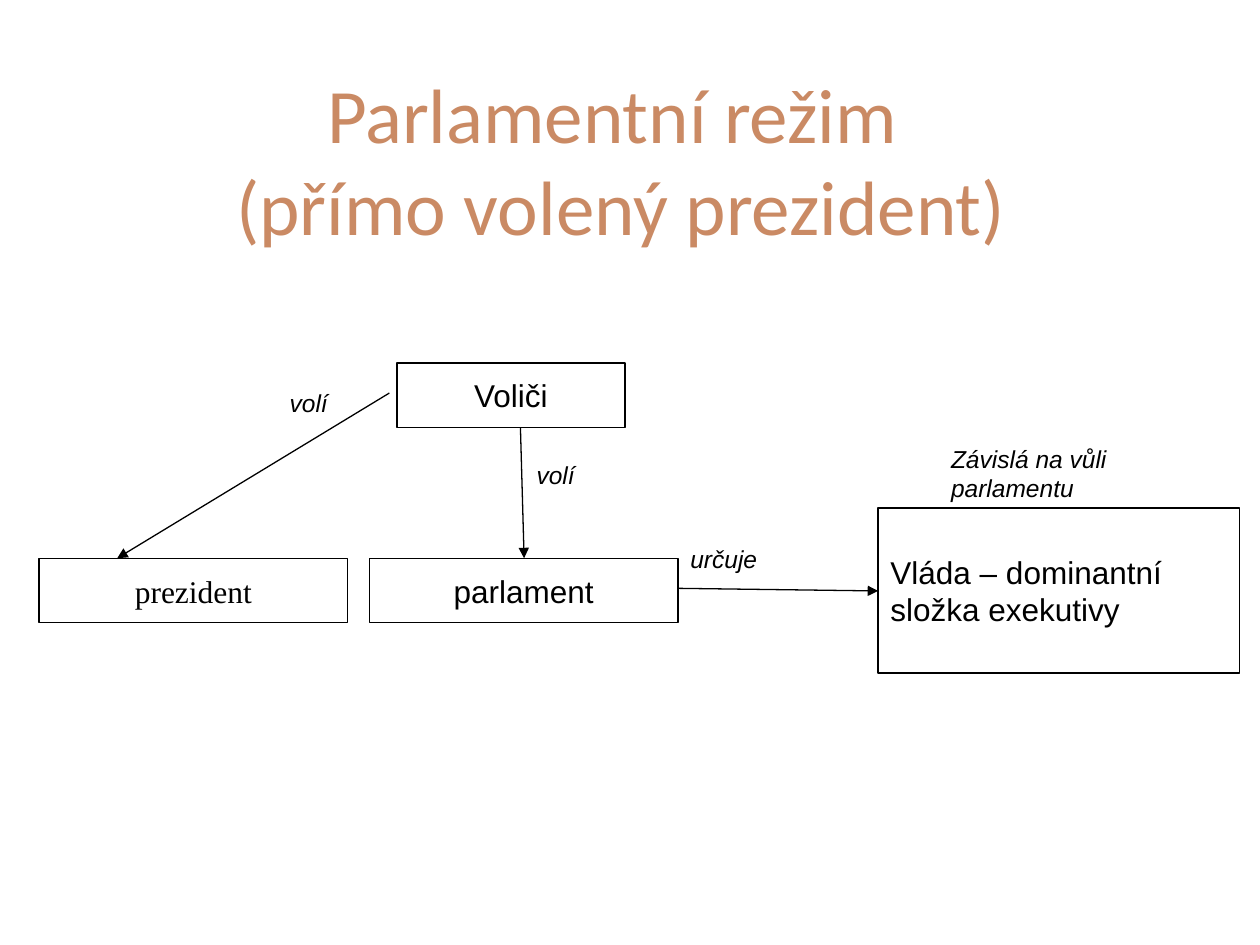
from dataclasses import dataclass

from lxml.etree import SubElement
from pptx import Presentation
from pptx.dml.color import RGBColor as Color
from pptx.enum.shapes import MSO_CONNECTOR as Link, MSO_SHAPE as Form
from pptx.enum.text import MSO_ANCHOR as Anchor, MSO_AUTO_SIZE as Fit, PP_ALIGN as Align
from pptx.oxml.ns import qn
from pptx.util import Pt


@dataclass(frozen=True)
class Theme:
    ink: Color = Color(0, 0, 0)
    accent: Color = Color(0xCA, 0x8A, 0x64)
    head: str = "Calibri"
    body: str = "Arial"
    serif: str = "Times New Roman"
    large: float = 44
    mid: float = 18
    small: float = 14
    line: float = 0.75


@dataclass(frozen=True)
class Area:
    x: float
    y: float
    w: float
    h: float

    def points(self) -> tuple:
        return Pt(self.x), Pt(self.y), Pt(self.w), Pt(self.h)


@dataclass(frozen=True)
class Box:
    text: str
    area: Area
    font: str
    align: Align = Align.CENTER


@dataclass(frozen=True)
class Label:
    text: str
    area: Area


@dataclass(frozen=True)
class Arrow:
    start: tuple[float, float]
    end: tuple[float, float]


THEME = Theme()
LEFT, ROW, WIDE, HIGH = 22.3, 319, 176.4, 36.7
NOTE = 23.8

BOXES = [
    Box("Voliči", Area(226.8, 207.4, 130.3, HIGH), THEME.body),
    Box("parlament", Area(211, ROW, WIDE, HIGH), THEME.body),
    Box("Vláda – dominantní složka exekutivy", Area(501.8, 290.2, 206.6, 94.3),
        THEME.body, Align.LEFT),
    Box("prezident", Area(LEFT, ROW, WIDE, HIGH), THEME.serif),
]
LABELS = [
    Label("volí", Area(158.4, 218.2, 79.9, NOTE)),
    Label("volí", Area(299.5, 259.2, 79.9, NOTE)),
    Label("určuje", Area(387.4, 307.4, 84.2, NOTE)),
    Label("Závislá na vůli parlamentu", Area(536.4, 249.8, 151.2, 40.9)),
]
ARROWS = [
    Arrow((297.4, 244.1), (299.5, ROW)),
    Arrow((222.5, 224.6), (67, ROW)),
    Arrow((387.4, 336.2), (501.8, 337.7)),
]


def write(shape, text: str, font: str, size: float, color: Color,
          align: Align, anchor: Anchor, italic: bool = False) -> None:
    frame = shape.text_frame
    frame.text = text
    frame.word_wrap = True
    frame.auto_size = Fit.NONE
    frame.vertical_anchor = anchor
    for para in frame.paragraphs:
        para.alignment = align
        face = para.font
        face.name, face.size, face.italic = font, Pt(size), italic
        face.color.rgb = color


def add_title(slide, text: str, area: Area) -> None:
    title = slide.shapes.title
    title.left, title.top, title.width, title.height = area.points()
    write(title, text, THEME.head, THEME.large, THEME.accent, Align.CENTER, Anchor.MIDDLE)


def add_box(slide, box: Box) -> None:
    shape = slide.shapes.add_shape(Form.RECTANGLE, *box.area.points())
    shape.shadow.inherit = False
    shape.fill.background()
    shape.line.color.rgb = THEME.ink
    shape.line.width = Pt(THEME.line)
    write(shape, box.text, box.font, THEME.mid, THEME.ink, box.align, Anchor.MIDDLE)


def add_label(slide, label: Label) -> None:
    shape = slide.shapes.add_textbox(*label.area.points())
    write(shape, label.text, THEME.body, THEME.small, THEME.ink,
          Align.LEFT, Anchor.BOTTOM, italic=True)


def add_arrow(slide, arrow: Arrow) -> None:
    ends = [Pt(n) for n in arrow.start + arrow.end]
    link = slide.shapes.add_connector(Link.STRAIGHT, *ends)
    link.line.color.rgb = THEME.ink
    link.line.width = Pt(THEME.line)
    props = link.line._get_or_add_ln()
    SubElement(props, qn("a:tailEnd"), type="triangle")
    SubElement(link._element.spPr, qn("a:effectLst"))


def main() -> None:
    """Build the slide on the parliamentary regime and save it."""
    deck = Presentation()
    deck.slide_width, deck.slide_height = Pt(720), Pt(540)
    slide = deck.slides.add_slide(deck.slide_layouts[5])
    add_title(slide, "Parlamentní režim \v(přímo volený prezident)",
              Area(LEFT, 75.6, 665.3, 30.2))
    for box in BOXES:
        add_box(slide, box)
    for arrow in ARROWS:
        add_arrow(slide, arrow)
    for label in LABELS:
        add_label(slide, label)
    deck.save("out.pptx")


if __name__ == "__main__":
    main()
